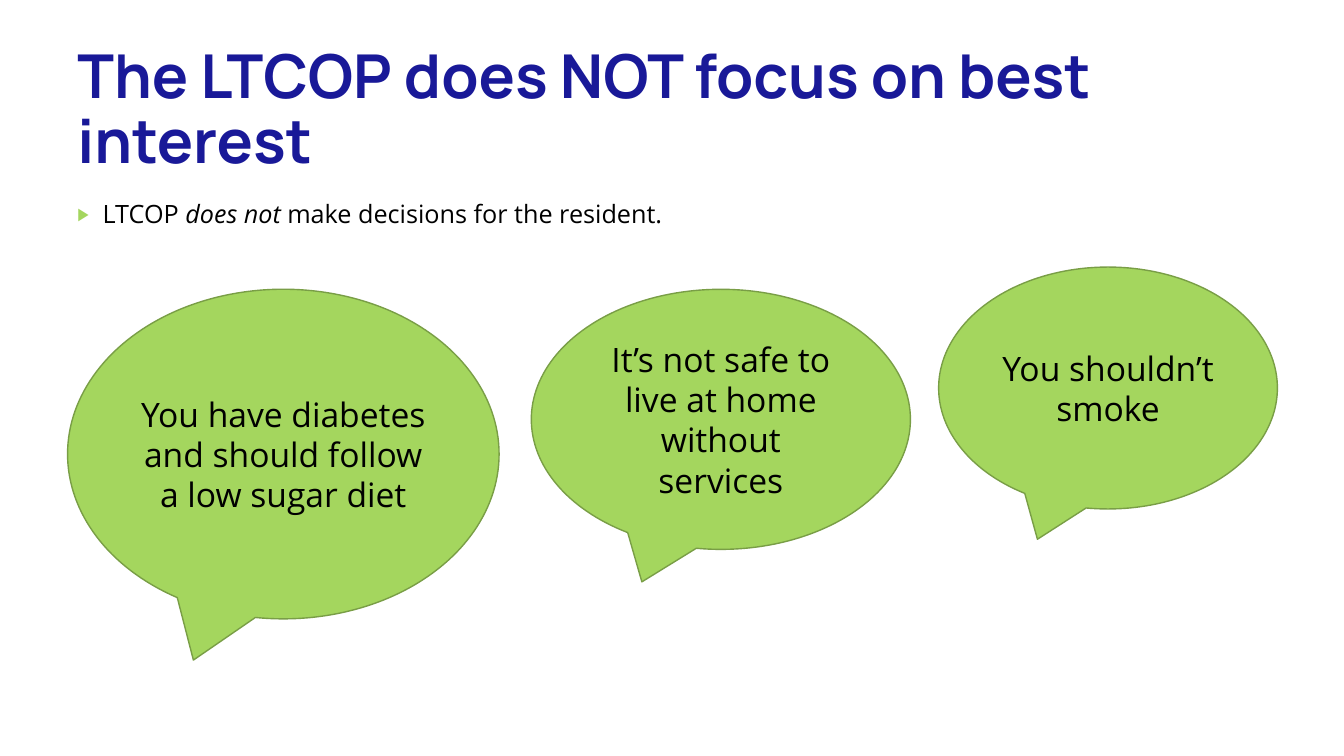
from lxml import etree
from pptx import Presentation
from pptx.dml.color import RGBColor
from pptx.enum.shapes import MSO_SHAPE
from pptx.enum.text import MSO_ANCHOR, PP_ALIGN
from pptx.oxml.ns import qn
from pptx.util import Inches, Pt

CALLOUT = MSO_SHAPE.OVAL_CALLOUT
MIDDLE, TOP = MSO_ANCHOR.MIDDLE, MSO_ANCHOR.TOP
LEFT, CENTER = PP_ALIGN.LEFT, PP_ALIGN.CENTER

COLORS = {"navy": "191998", "green": "A4D65E", "edge": "799E46", "ink": "000000"}
HEAD = {"name": "Manrope", "size": Pt(43.2), "bold": True}
BODY = {"name": "Open Sans", "size": Pt(18)}
QUOTE = {"name": "Open Sans", "size": Pt(24)}

TITLE = "The LTCOP does NOT focus on best interest"
POINT = [("LTCOP ", False), ("does not ", True),
         ("make decisions for the resident.", False)]
QUOTES = [
    ("You have diabetes and should follow a low sugar diet", (0.67, 2.87, 4.28, 3.27)),
    ("It’s not safe to live at home without services", (5.27, 2.87, 3.76, 2.58)),
    ("You shouldn’t smoke", (9.31, 2.65, 3.36, 2.4)),
]


def color(name):
    return RGBColor.from_string(COLORS[name])


def write(shape, runs, style, ink, anchor, align):
    frame = shape.text_frame
    frame.word_wrap = True
    frame.vertical_anchor = anchor
    para = frame.paragraphs[0]
    para.alignment = align
    for text, slant in runs:
        run = para.add_run()
        run.text = text
        for key, value in {**style, "italic": slant}.items():
            setattr(run.font, key, value)
        run.font.color.rgb = color(ink)
    return para


def add_bullet(para):
    props = para._p.get_or_add_pPr()
    props.set("marL", str(Inches(0.25)))
    props.set("indent", str(Inches(-0.25)))
    tint = etree.SubElement(props, qn("a:buClr"))
    etree.SubElement(tint, qn("a:srgbClr"), val=COLORS["green"])
    etree.SubElement(props, qn("a:buSzPct"), val="70000")
    etree.SubElement(props, qn("a:buFont"), typeface="Open Sans")
    etree.SubElement(props, qn("a:buChar"), char="▶")


def main():
    """Build the slide on what the LTCOP does not do."""
    deck = Presentation()
    deck.slide_width, deck.slide_height = Inches(13.33), Inches(7.5)
    shapes = deck.slides.add_slide(deck.slide_layouts[6]).shapes

    title = shapes.add_textbox(*map(Inches, (0.67, 0.68, 12, 0.85)))
    para = write(title, [(TITLE, False)], HEAD, "navy", MIDDLE, LEFT)
    para.line_spacing = 0.9

    body = shapes.add_textbox(*map(Inches, (0.67, 1.92, 12, 0.5)))
    add_bullet(write(body, POINT, BODY, "ink", TOP, LEFT))

    for text, box in QUOTES:
        bubble = shapes.add_shape(CALLOUT, *map(Inches, box))
        bubble.shadow.inherit = False
        bubble.fill.solid()
        bubble.fill.fore_color.rgb = color("green")
        bubble.line.color.rgb = color("edge")
        bubble.line.width = Pt(1)
        write(bubble, [(text, False)], QUOTE, "ink", MIDDLE, CENTER)

    deck.save("out.pptx")


if __name__ == "__main__":
    main()
